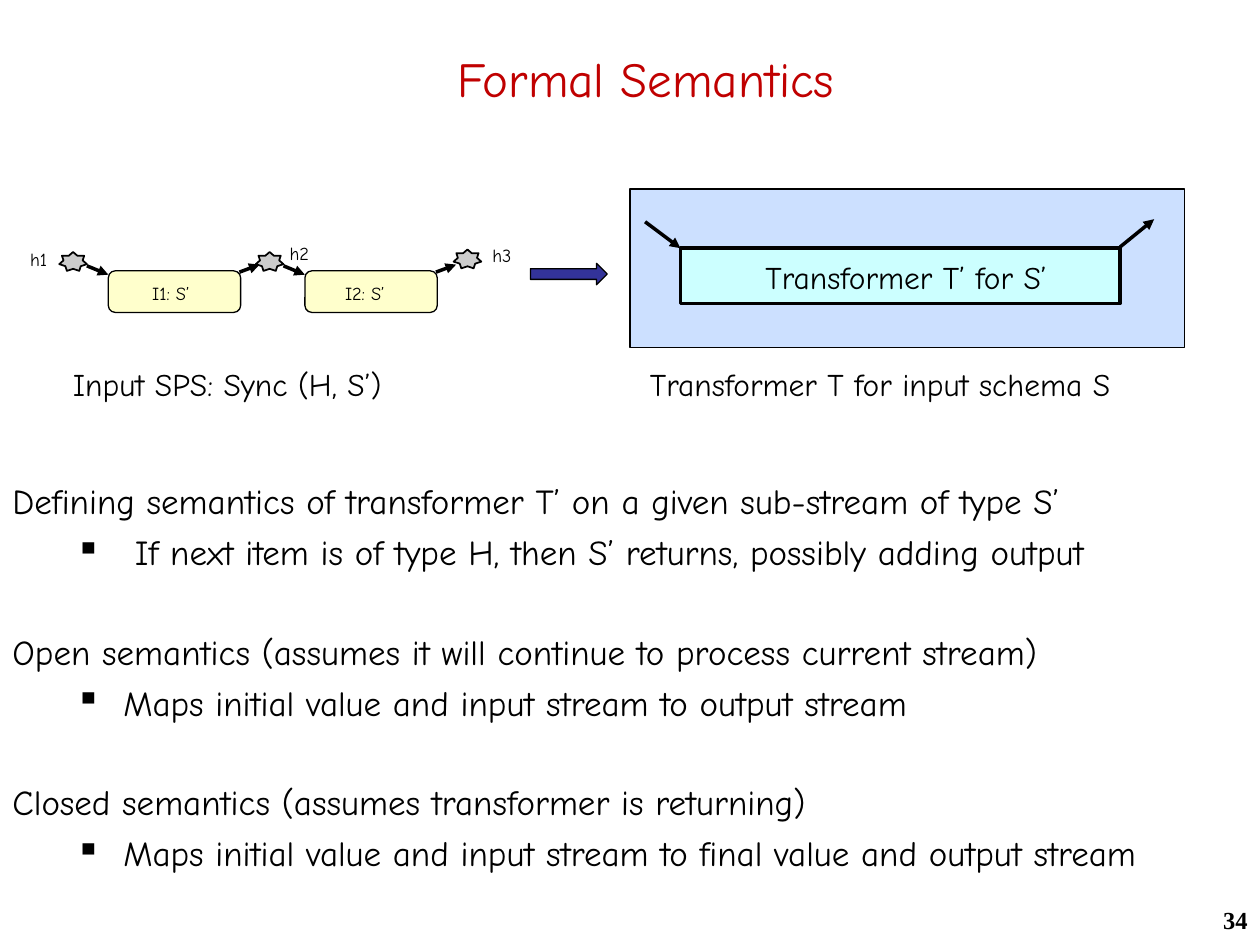
from dataclasses import dataclass

import pptx
import pptx.dml.color
import pptx.enum.shapes
import pptx.enum.text
import pptx.oxml
import pptx.oxml.ns
import pptx.util
from pptx.util import Inches

SHAPE = pptx.enum.shapes.MSO_SHAPE
ALIGN = pptx.enum.text.PP_ALIGN
ANCHOR = pptx.enum.text.MSO_ANCHOR
FONT = "Comic Neue"
COLOURS = {
    "title": "C00000",
    "ink": "000000",
    "panel": "CCE0FF",
    "item": "CCCCCC",
    "stage": "FFFFCC",
    "transformer": "CCFFFF",
    "implies": "333399",
}


@dataclass(frozen=True)
class Box:
    left: float
    top: float
    width: float
    height: float

    def lengths(self) -> tuple:
        return tuple(Inches(v) for v in (self.left, self.top, self.width, self.height))


@dataclass(frozen=True)
class Label:
    text: str
    box: Box
    size: float
    colour: str = "ink"
    align: ALIGN = ALIGN.LEFT
    anchor: ANCHOR = ANCHOR.TOP
    font: str = FONT
    bold: bool = False
    wrap: bool = True


@dataclass(frozen=True)
class Topic:
    heading: str
    point: str


def rgb(name: str) -> pptx.dml.color.RGBColor:
    return pptx.dml.color.RGBColor.from_string(COLOURS[name])


def add_run(paragraph, text: str, size: float, colour: str = "ink",
            font: str = FONT, bold: bool = False) -> None:
    run = paragraph.add_run()
    run.text = text
    run.font.size = pptx.util.Pt(size)
    run.font.name = font
    run.font.bold = bold
    run.font.color.rgb = rgb(colour)


def add_label(slide, label: Label) -> None:
    frame = slide.shapes.add_textbox(*label.box.lengths()).text_frame
    frame.word_wrap = label.wrap
    frame.vertical_anchor = label.anchor
    paragraph = frame.paragraphs[0]
    paragraph.alignment = label.align
    add_run(paragraph, label.text, label.size, label.colour, label.font, label.bold)


def add_figure(slide, kind: SHAPE, box: Box, fill: str, weight: float = 0.75):
    figure = slide.shapes.add_shape(kind, *box.lengths())
    figure.shadow.inherit = False
    figure.fill.solid()
    figure.fill.fore_color.rgb = rgb(fill)
    figure.line.color.rgb = rgb("ink")
    figure.line.width = pptx.util.Pt(weight)
    return figure


def add_arrow(slide, x1: float, y1: float, x2: float, y2: float) -> None:
    arrow = slide.shapes.add_connector(
        pptx.enum.shapes.MSO_CONNECTOR.STRAIGHT,
        Inches(x1), Inches(y1), Inches(x2), Inches(y2))
    arrow.line.color.rgb = rgb("ink")
    arrow.line.width = pptx.util.Pt(2)
    qn = pptx.oxml.ns.qn
    arrow.line._get_or_add_ln().append(
        arrow._element.makeelement(qn("a:tailEnd"), {"type": "triangle"}))
    arrow._element.spPr.append(arrow._element.makeelement(qn("a:effectLst"), {}))


def add_bullet(paragraph) -> None:
    properties = paragraph._p.get_or_add_pPr()
    properties.set("marL", str(Inches(0.88)))
    properties.set("indent", str(Inches(-0.38)))
    properties.append(properties.makeelement(pptx.oxml.ns.qn("a:buChar"), {"char": "▪"}))


def add_topics(slide, box: Box, topics: list[Topic]) -> None:
    frame = slide.shapes.add_textbox(*box.lengths()).text_frame
    frame.word_wrap = True
    for index, topic in enumerate(topics):
        heading = frame.add_paragraph() if index else frame.paragraphs[0]
        heading.space_before = pptx.util.Pt(33 if index else 5)
        add_run(heading, topic.heading, 20)
        point = frame.add_paragraph()
        point.level = 1
        point.space_before = pptx.util.Pt(5)
        add_bullet(point)
        add_run(point, topic.point, 20)


def add_item(slide, left: float, top: float) -> None:
    add_figure(slide, SHAPE.STAR_7_POINT, Box(left, top, 0.22, 0.15), "item", 1)


def add_stage(slide, left: float) -> None:
    add_item(slide, left, 2)
    add_arrow(slide, left + 0.22, 2.11, left + 0.39, 2.18)
    add_figure(slide, SHAPE.ROUNDED_RECTANGLE, Box(left + 0.39, 2.15, 1.05, 0.33), "stage")
    add_arrow(slide, left + 1.43, 2.16, left + 1.59, 2.1)


def add_transformer(slide) -> None:
    transformer = add_figure(slide, SHAPE.RECTANGLE, Box(5.4, 1.97, 3.49, 0.44),
                             "transformer", 2)
    frame = transformer.text_frame
    frame.vertical_anchor = ANCHOR.TOP
    paragraph = frame.paragraphs[0]
    paragraph.alignment = ALIGN.CENTER
    add_run(paragraph, " ", 20, "title")
    add_run(paragraph, "Transformer T’ for S’", 18)


TOPICS = [
    Topic("Defining semantics of transformer T’ on a given sub-stream of type S’",
          " If next item is of type H, then S’ returns, possibly adding output"),
    Topic("Open semantics (assumes it will continue to process current stream)",
          "Maps initial value and input stream to output stream"),
    Topic("Closed semantics (assumes transformer is returning)",
          "Maps initial value and input stream to final value and output stream"),
]

LABELS = [
    Label("Formal Semantics", Box(0.25, 0.33, 9.75, 0.58), 28, "title",
          ALIGN.CENTER, ANCHOR.MIDDLE),
    Label("34", Box(9.5, 7.13, 0.5, 0.37), 14, align=ALIGN.RIGHT,
          font="Times New Roman", bold=True),
    Label("h1", Box(0.14, 1.92, 0.38, 0.28), 10.5),
    Label("h2", Box(2.2, 1.87, 0.47, 0.28), 10.5),
    Label("h3", Box(3.81, 1.89, 0.38, 0.28), 10.5),
    Label("I1: S’", Box(1.11, 2.19, 0.71, 0.28), 10.5),
    Label("I2: S’", Box(2.64, 2.19, 0.69, 0.28), 10.5),
    Label("Input SPS: Sync (H, S’)", Box(0.48, 2.85, 3.01, 0.4), 18, wrap=False),
    Label("Transformer T for input schema S", Box(5.06, 2.85, 4.27, 0.4), 18, wrap=False),
]


def main() -> None:
    deck = pptx.Presentation()
    deck.slide_width, deck.slide_height = Inches(10), Inches(7.5)
    slide = deck.slides.add_slide(deck.slide_layouts[6])
    add_topics(slide, Box(0, 3.76, 9.92, 3.45), TOPICS)
    add_figure(slide, SHAPE.RECTANGLE, Box(5, 1.5, 4.4, 1.26), "panel")
    for stage_left in (0.47, 2.03):
        add_stage(slide, stage_left)
    add_item(slide, 3.6, 1.98)
    add_transformer(slide)
    add_figure(slide, SHAPE.RIGHT_ARROW, Box(4.21, 2.09, 0.61, 0.17), "implies")
    add_arrow(slide, 5.12, 1.76, 5.4, 1.97)
    add_arrow(slide, 8.89, 1.96, 9.16, 1.74)
    for label in LABELS:
        add_label(slide, label)
    deck.save("out.pptx")


if __name__ == "__main__":
    main()
